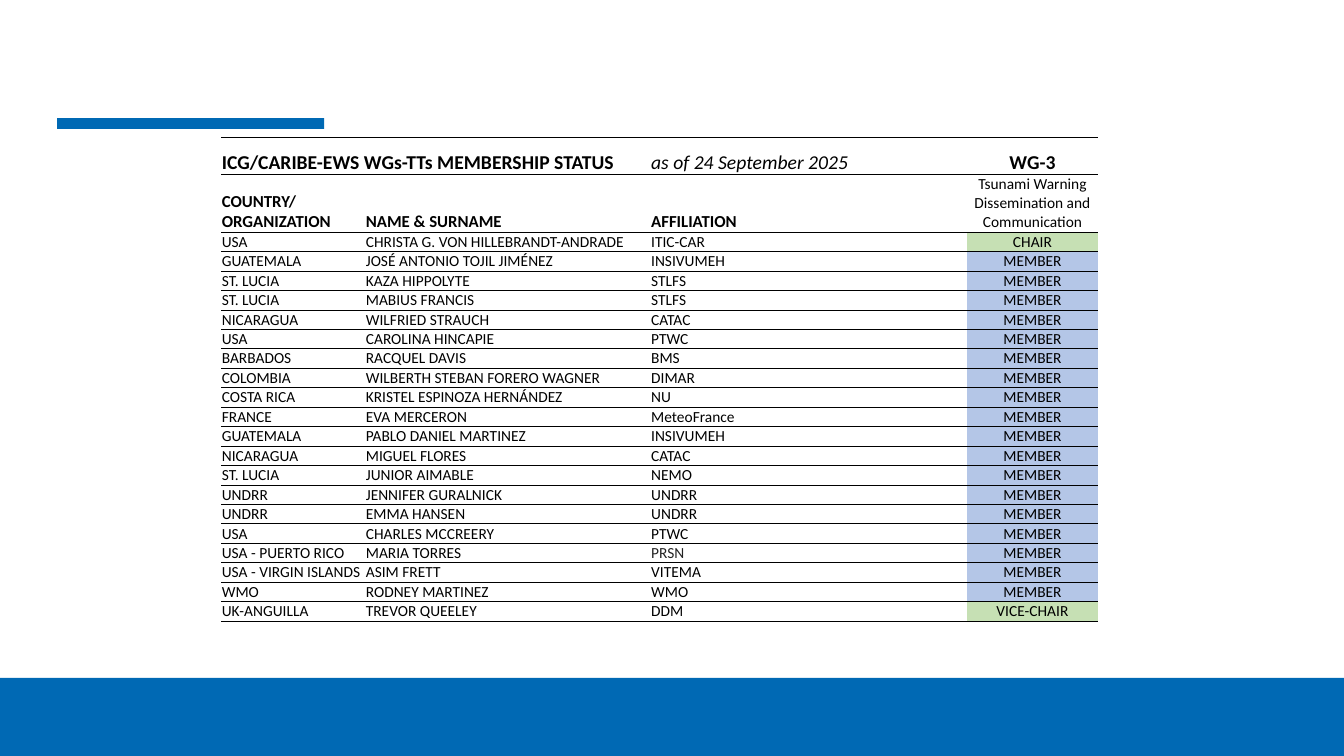
from lxml import etree
from pptx import Presentation
from pptx import util as u
from pptx.dml.color import RGBColor
from pptx.enum import shapes, text
from pptx.oxml.ns import qn

BLUE, BLACK = "0069B4", "000000"
ROLE_FILLS = {"CHAIR": "C6E0B4", "VICE-CHAIR": "C6E0B4", "MEMBER": "B4C6E7"}
COL_WIDTHS = (3.63, 7.19, 7.98, 3.3)
TITLE_H, HEADER_H, MEMBER_H = 0.94, 1.37, 0.49

TITLES = ("ICG/CARIBE-EWS WGs-TTs MEMBERSHIP STATUS", "", "as of 24 September 2025", "WG-3")
HEADERS = ("COUNTRY/ORGANIZATION", "NAME & SURNAME", "AFFILIATION",
           "Tsunami Warning Dissemination and Communication")
MEMBERS = (
    ("USA", "CHRISTA G. VON HILLEBRANDT-ANDRADE", "ITIC-CAR", "CHAIR"),
    ("GUATEMALA", "JOSÉ ANTONIO TOJIL JIMÉNEZ", "INSIVUMEH", "MEMBER"),
    ("ST. LUCIA", "KAZA HIPPOLYTE", "STLFS", "MEMBER"),
    ("ST. LUCIA", "MABIUS FRANCIS", "STLFS", "MEMBER"),
    ("NICARAGUA", "WILFRIED STRAUCH", "CATAC", "MEMBER"),
    ("USA", "CAROLINA HINCAPIE", "PTWC", "MEMBER"),
    ("BARBADOS", "RACQUEL DAVIS", "BMS", "MEMBER"),
    ("COLOMBIA", "WILBERTH STEBAN FORERO WAGNER", "DIMAR", "MEMBER"),
    ("COSTA RICA", "KRISTEL ESPINOZA HERNÁNDEZ", "NU", "MEMBER"),
    ("FRANCE", "EVA MERCERON", "MeteoFrance", "MEMBER"),
    ("GUATEMALA", "PABLO DANIEL MARTINEZ", "INSIVUMEH", "MEMBER"),
    ("NICARAGUA", "MIGUEL FLORES", "CATAC", "MEMBER"),
    ("ST. LUCIA", "JUNIOR AIMABLE", "NEMO", "MEMBER"),
    ("UNDRR", "JENNIFER GURALNICK", "UNDRR", "MEMBER"),
    ("UNDRR", "EMMA HANSEN", "UNDRR", "MEMBER"),
    ("USA", "CHARLES MCCREERY", "PTWC", "MEMBER"),
    ("USA - PUERTO RICO", "MARIA TORRES", "PRSN", "MEMBER"),
    ("USA - VIRGIN ISLANDS", "ASIM FRETT", "VITEMA", "MEMBER"),
    ("WMO", "RODNEY MARTINEZ", "WMO", "MEMBER"),
    ("UK-ANGUILLA", "TREVOR QUEELEY", "DDM", "VICE-CHAIR"),
)


def rgb(hex_string):
    return RGBColor.from_string(hex_string)


def add_bar(s, x, y, w, h):
    sp = s.shapes.add_shape(shapes.MSO_SHAPE.RECTANGLE, u.Cm(x), u.Cm(y), u.Cm(w), u.Cm(h))
    sp.shadow.inherit = False
    sp.fill.solid()
    sp.fill.fore_color.rgb = rgb(BLUE)
    sp.line.fill.background()


def rule_cell(cell):
    tcPr = cell._tc.get_or_add_tcPr()
    for side in ("lnL", "lnR"):
        ln = etree.SubElement(tcPr, qn(f"a:{side}"), w="0")
        etree.SubElement(ln, qn("a:noFill"))
    for side in ("lnT", "lnB"):
        ln = etree.SubElement(tcPr, qn(f"a:{side}"), w=str(u.Pt(0.5)))
        fill = etree.SubElement(ln, qn("a:solidFill"))
        etree.SubElement(fill, qn("a:srgbClr"), val=BLACK)


def fill_cell(cell, words, size, bold=False, italic=False, centred=False, color=BLACK, back=None):
    rule_cell(cell)
    if back:
        cell.fill.solid()
        cell.fill.fore_color.rgb = rgb(back)
    else:
        cell.fill.background()
    cell.margin_left = cell.margin_right = u.Cm(0.02)
    cell.margin_top, cell.margin_bottom = u.Cm(0.01), 0
    cell.vertical_anchor = text.MSO_ANCHOR.BOTTOM
    p = cell.text_frame.paragraphs[0]
    p.alignment = text.PP_ALIGN.CENTER if centred else text.PP_ALIGN.LEFT
    p.font.size = u.Pt(size)
    if words:
        r = p.add_run()
        r.text = words
        r.font.name, r.font.size = "Calibri", u.Pt(size)
        r.font.bold, r.font.italic = bold, italic
        r.font.color.rgb = rgb(color)


def add_membership_table(s, x, y, w, h):
    rows = (TITLES, HEADERS) + MEMBERS
    tbl = s.shapes.add_table(len(rows), len(COL_WIDTHS),
                             u.Cm(x), u.Cm(y), u.Cm(w), u.Cm(h)).table
    tbl.first_row = tbl.horz_banding = False
    for col, width in zip(tbl.columns, COL_WIDTHS):
        col.width = u.Cm(width)
    heights = [TITLE_H, HEADER_H] + [MEMBER_H] * len(MEMBERS)
    for row, height in zip(tbl.rows, heights):
        row.height = u.Cm(height)
    tbl.cell(0, 0).merge(tbl.cell(0, 1))

    for j, words in enumerate(TITLES):
        fill_cell(tbl.cell(0, j), words, 14, bold=j != 2, italic=j == 2, centred=j == 3)
    for j, words in enumerate(HEADERS):
        fill_cell(tbl.cell(1, j), words, 11 if j == 3 else 12, bold=j != 3, centred=j == 3)
    for i, member in enumerate(MEMBERS, 2):
        for j, words in enumerate(member):
            fill_cell(tbl.cell(i, j), words, 11, centred=j == 3,
                      color="232323" if words == "PRSN" else BLACK,
                      back=ROLE_FILLS[words] if j == 3 else None)


def main():
    prs = Presentation()
    prs.slide_width, prs.slide_height = u.Cm(33.87), u.Cm(19.05)
    s = prs.slides.add_slide(prs.slide_layouts[6])
    add_bar(s, 1.44, 2.98, 6.73, 0.27)
    add_bar(s, 0, 17.08, 33.87, 1.97)
    add_membership_table(s, 5.57, 3.46, sum(COL_WIDTHS),
                         TITLE_H + HEADER_H + MEMBER_H * len(MEMBERS))
    prs.save("out.pptx")


if __name__ == "__main__":
    main()
